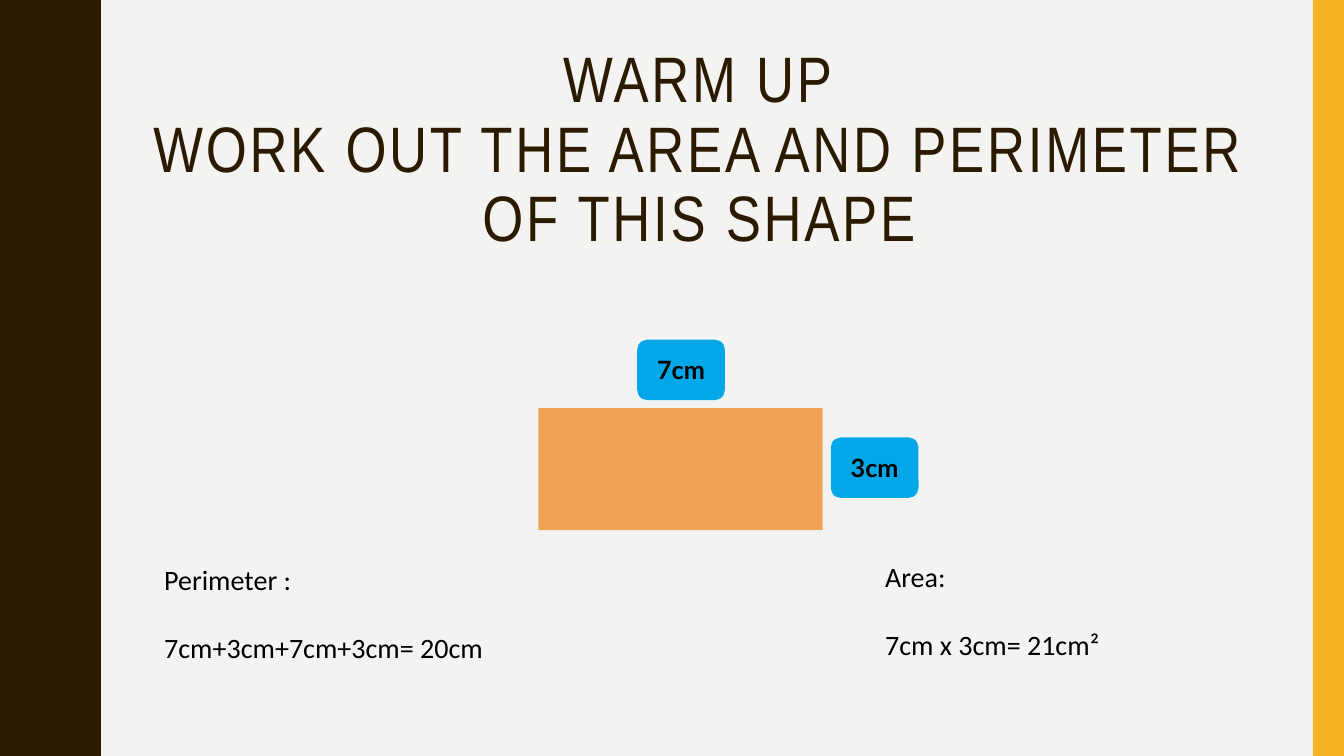
import pptx
import pptx.util
import pptx.dml.color
import pptx.enum.shapes
import pptx.enum.text
import pptx.oxml.ns
import lxml.etree

Inches = pptx.util.Inches
Pt = pptx.util.Pt
RGBColor = pptx.dml.color.RGBColor
SHAPE = pptx.enum.shapes.MSO_SHAPE
ALIGN = pptx.enum.text.PP_ALIGN
ANCHOR = pptx.enum.text.MSO_ANCHOR
AUTO = pptx.enum.text.MSO_AUTO_SIZE

TITLE = ["WARM UP", "WORK OUT THE AREA AND PERIMETER OF THIS SHAPE"]
LABELS = [("7cm", 6.32, 3.37), ("3cm", 8.24, 4.34)]
ANSWERS = [
    (["Perimeter :", "7cm+3cm+7cm+3cm= 20cm"], (1.53, 5.53, 3.62, 1.11)),
    (["Area:", "7cm x 3cm= 21cm²"], (8.68, 5.5, 5.55, 1.41)),
]
HALF_WAVE = [
    (0.78, 0), (0.78, 0.07), (0.79, 0.14), (0.8, 0.2), (0.81, 0.25),
    (0.83, 0.29), (0.85, 0.33), (0.87, 0.38), (0.89, 0.42), (0.91, 0.46),
    (0.93, 0.5), (0.95, 0.55), (0.96, 0.61), (0.97, 0.68), (0.97, 0.75),
]

WIDTH, HEIGHT = 13.33, 7.5
WAVES = 5
PERIOD = HEIGHT / WAVES
BAR = 0.31
LABEL_SIZE = (0.87, 0.6)

PAPER = RGBColor(0xF3, 0xF3, 0xF2)
BROWN = RGBColor(0x2A, 0x1A, 0x00)
YELLOW = RGBColor(0xF8, 0xB3, 0x23)
ORANGE = RGBColor(0xF0, 0x82, 0x13)
BLUE = RGBColor(0x01, 0xA7, 0xE7)
BLACK = RGBColor(0, 0, 0)


def paint(sp, color):
    sp.shadow.inherit = False
    sp.fill.solid()
    sp.fill.fore_color.rgb = color
    sp.line.fill.background()


def add_block(s, kind, box, color):
    sp = s.shapes.add_shape(kind, *map(Inches, box))
    paint(sp, color)
    return sp


def add_run(p, text, font, size, color, bold=False):
    r = p.add_run()
    r.text = text
    r.font.name = font
    r.font.size = Pt(size)
    r.font.color.rgb = color
    r.font.bold = bold
    return r


def add_wave(s):
    wave = HALF_WAVE + [(x, PERIOD - y) for x, y in HALF_WAVE[-2::-1]]
    edge = [(x, y + i * PERIOD) for i in range(WAVES) for x, y in wave]
    fb = s.shapes.build_freeform(0, 0, scale=Inches(1))
    fb.add_line_segments(edge + [(0, HEIGHT)], close=True)
    paint(fb.convert_to_shape(), BROWN)


def add_title(s):
    sp = s.shapes.title
    sp.element.getparent().append(sp.element)
    sp.left, sp.top, sp.width, sp.height = map(Inches, (1.37, 0.42, 11.13, 1.63))
    tf = sp.text_frame
    tf.word_wrap = True
    tf.auto_size = AUTO.NONE
    tf.vertical_anchor = ANCHOR.TOP
    p = tf.paragraphs[0]
    p.alignment = ALIGN.CENTER
    p.line_spacing = 0.9
    for i, line in enumerate(TITLE):
        if i:
            p.add_line_break()
        r = add_run(p, line, "Arial Narrow", 45.9, BROWN)
        r.font._element.set("spc", "200")
    for br in p._p.findall(pptx.oxml.ns.qn("a:br")):
        lxml.etree.SubElement(br, pptx.oxml.ns.qn("a:rPr")).set("sz", "4590")


def add_label(s, text, left, top):
    sp = add_block(s, SHAPE.ROUNDED_RECTANGLE, (left, top, *LABEL_SIZE), BLUE)
    tf = sp.text_frame
    tf.margin_left = tf.margin_right = tf.margin_top = tf.margin_bottom = Inches(0.12)
    tf.word_wrap = False
    tf.vertical_anchor = ANCHOR.MIDDLE
    p = tf.paragraphs[0]
    p.alignment = ALIGN.CENTER
    add_run(p, text, "Lato", 18, BLACK, True)


def add_answer(s, lines, box):
    tf = s.shapes.add_textbox(*map(Inches, box)).text_frame
    tf.word_wrap = True
    for i, line in enumerate(lines):
        p = tf.add_paragraph() if i else tf.paragraphs[0]
        p.space_before = Pt(24.4 * i)
        add_run(p, line, "Calibri", 20, BLACK)


def main():
    prs = pptx.Presentation()
    prs.slide_width, prs.slide_height = Inches(WIDTH), Inches(HEIGHT)
    s = prs.slides.add_slide(prs.slide_layouts[5])
    s.background.fill.solid()
    s.background.fill.fore_color.rgb = PAPER

    add_wave(s)
    add_block(s, SHAPE.RECTANGLE, (WIDTH - BAR, 0, BAR, HEIGHT), YELLOW)
    add_title(s)

    rect = add_block(s, SHAPE.RECTANGLE, (5.34, 4.05, 2.82, 1.21), ORANGE)
    clr = rect.element.spPr.find(".//" + pptx.oxml.ns.qn("a:srgbClr"))
    lxml.etree.SubElement(clr, pptx.oxml.ns.qn("a:alpha")).set("val", "70000")

    for label in LABELS:
        add_label(s, *label)
    for answer in ANSWERS:
        add_answer(s, *answer)
    prs.save("out.pptx")


if __name__ == "__main__":
    main()
